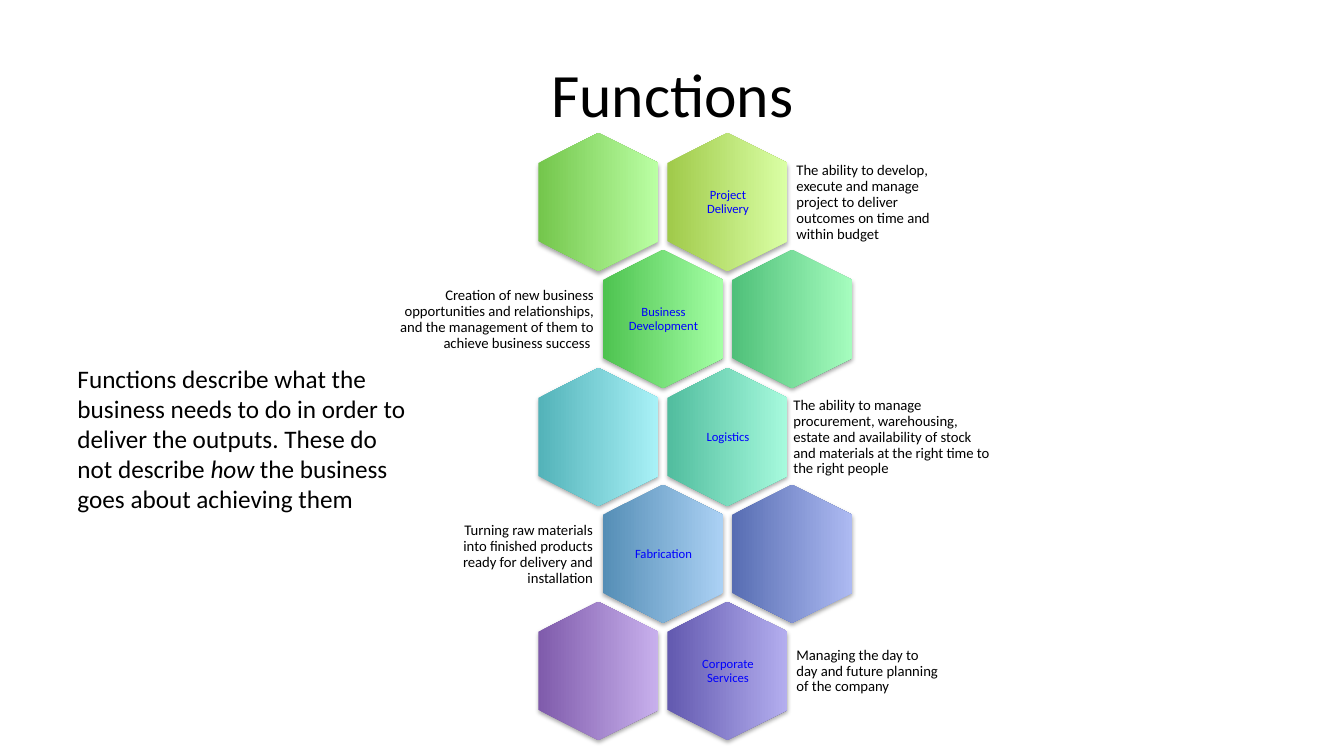
"""Build the Functions slide: a honeycomb of business functions with descriptions."""
from dataclasses import dataclass

from lxml import etree
from pptx import Presentation
from pptx.dml.color import RGBColor
from pptx.enum.shapes import MSO_SHAPE
from pptx.enum.text import MSO_ANCHOR, MSO_AUTO_SIZE, PP_ALIGN
from pptx.oxml import parse_xml
from pptx.oxml.ns import qn
from pptx.util import Emu, Pt


@dataclass(frozen=True)
class Theme:
    font: str = "Calibri"
    ink: str = "000000"
    label_ink: str = "0000FF"
    title_size: float = 44
    intro_size: float = 18
    description_size: float = 10.5
    label_size: float = 9


THEME = Theme()
PX = 9144
SHADOW = (
    '<a:effectLst xmlns:a="http://schemas.openxmlformats.org/drawingml/2006/main">'
    '<a:outerShdw blurRad="40000" dist="23000" dir="5400000" rotWithShape="0">'
    '<a:srgbClr val="000000"><a:alpha val="35000"/></a:srgbClr>'
    "</a:outerShdw></a:effectLst>"
)


def add_run(paragraph, text, size, color=THEME.ink, italic=False):
    run = paragraph.add_run()
    run.text = text
    run.font.name = THEME.font
    run.font.size = Pt(size)
    run.font.italic = italic
    run.font.color.rgb = RGBColor.from_string(color)


def add_caption(shapes, box, text, size, color, align, inset):
    frame = shapes.add_textbox(*(Emu(v * PX) for v in box)).text_frame
    frame.word_wrap = True
    frame.vertical_anchor = MSO_ANCHOR.MIDDLE
    frame.margin_left = frame.margin_right = Emu(inset * PX)
    frame.margin_top = frame.margin_bottom = Emu(inset * PX)
    paragraph = frame.paragraphs[0]
    paragraph.alignment = align
    paragraph.line_spacing = 0.9
    paragraph.space_after = Pt(round(size * 0.35))
    add_run(paragraph, text, size, color)


prs = Presentation()
prs.slide_width, prs.slide_height = Emu(1333 * PX), Emu(750 * PX)
slide = prs.slides.add_slide(prs.slide_layouts[5])

title = slide.shapes.title
title.left, title.top = Emu(67 * PX), Emu(30 * PX)
title.width, title.height = Emu(1200 * PX), Emu(125 * PX)
title.text_frame.vertical_anchor = MSO_ANCHOR.MIDDLE
title.text_frame.paragraphs[0].alignment = PP_ALIGN.CENTER
add_run(title.text_frame.paragraphs[0], "Functions", THEME.title_size)

HEX_W, HEX_H = 137, 119
COMB_LEFT, COMB_TOP = 525, 141
COLUMN_STEP, ROW_STEP = 128, 116.33

functions = [
    ("Project Delivery",
     "The ability to develop, execute and manage project to deliver outcomes on time and within budget",
     785, 153, [("74C64C", "BBFFA4"), ("A0CA4A", "DAFFA5")]),
    ("Business Development",
     "Creation of new business opportunities and relationships, "
     "and the management of them to achieve business success ",
     390, 204, [("4EC350", "A4FFA5"), ("4FC079", "A5FCBE")]),
    ("Logistics",
     "The ability to manage procurement, warehousing, estate and availability of stock "
     "and materials at the right time to the right people",
     782, 207, [("53B3B9", "A9F1F7"), ("51BD9E", "A7FADD")]),
    ("Fabrication",
     "Turning raw materials into finished products ready for delivery and installation",
     445, 148, [("558EB6", "ABD1F4"), ("576DB2", "ADBAF2")]),
    ("Corporate Services",
     "Managing the day to day and future planning of the company",
     785, 153, [("7F5BAB", "C8B0ED"), ("6259AF", "B4AEEF")]),
]

honeycomb = slide.shapes.add_group_shape().shapes
for row, (name, description, description_left, description_width, shades) in enumerate(functions):
    shifted = row % 2
    row_left = COMB_LEFT + shifted * COLUMN_STEP // 2
    row_top = COMB_TOP + round(row * ROW_STEP)
    for column, (dark, light) in enumerate(shades):
        cell = honeycomb.add_shape(
            MSO_SHAPE.HEXAGON, Emu((row_left + column * COLUMN_STEP) * PX),
            Emu(row_top * PX), Emu(HEX_W * PX), Emu(HEX_H * PX))
        cell.rotation = 90
        cell.fill.gradient()
        cell.fill.gradient_angle = 90
        for stop, shade in zip(cell.fill.gradient_stops, (dark, light)):
            stop.color.rgb = RGBColor.from_string(shade)
        cell.line.fill.background()
        cell.shadow.inherit = False
        properties = cell._element.spPr
        properties.replace(properties.find(qn("a:effectLst")), parse_xml(SHADOW))

    label_left = row_left + (1 - shifted) * COLUMN_STEP + 28
    add_caption(honeycomb, (label_left, row_top + 13, 82, 94), name,
                THEME.label_size, THEME.label_ink, PP_ALIGN.CENTER, 4)
    add_caption(honeycomb, (description_left, row_top + 19, description_width, 82), description,
                THEME.description_size, THEME.ink,
                PP_ALIGN.RIGHT if shifted else PP_ALIGN.LEFT, 5)

intro = slide.shapes.add_textbox(*(Emu(v * PX) for v in (67, 355, 349, 162))).text_frame
intro.word_wrap = True
intro.auto_size = MSO_AUTO_SIZE.SHAPE_TO_FIT_TEXT
for text, italic in [
    ("Functions describe what the business needs to do in order to deliver the outputs. "
     "These do not describe ", False),
    ("how", True),
    (" the business goes about achieving them", False),
]:
    add_run(intro.paragraphs[0], text, THEME.intro_size, italic=italic)

prs.save("out.pptx")
